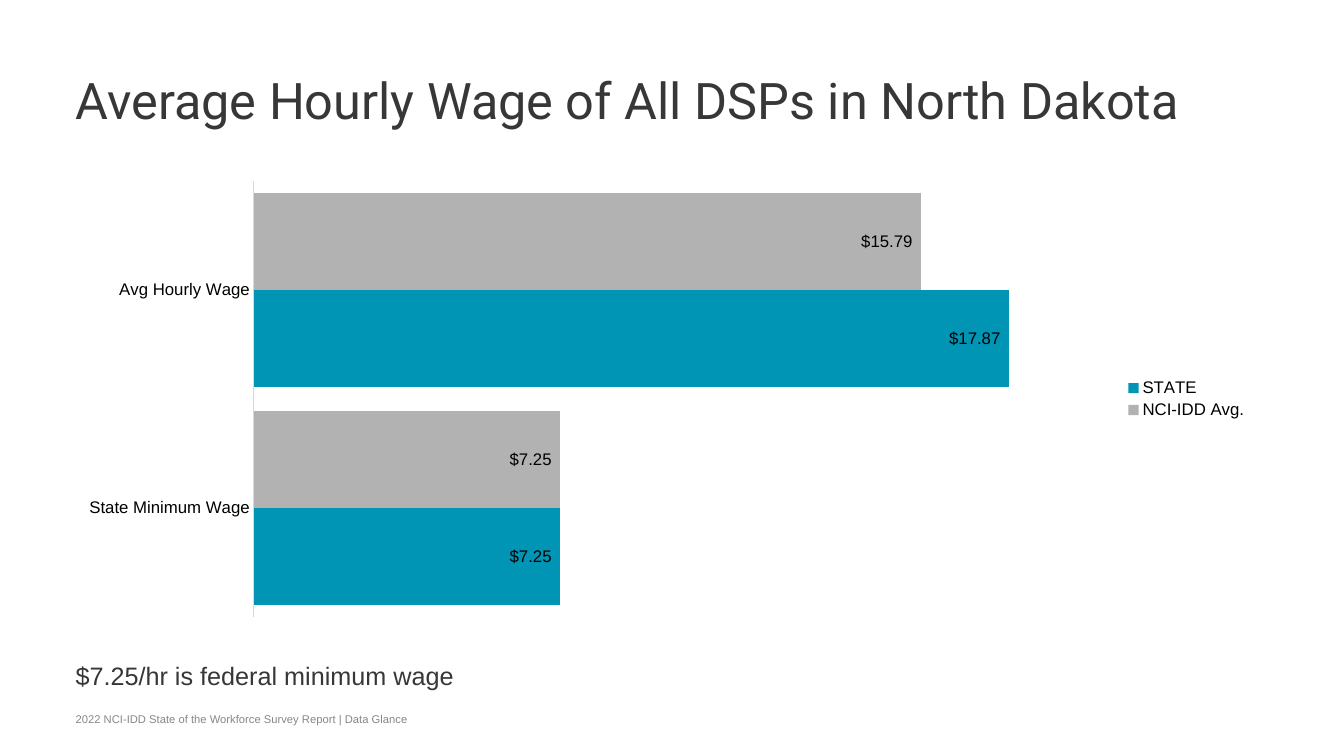
from dataclasses import dataclass

from pptx import Presentation
from pptx.chart.data import CategoryChartData
from pptx.dml.color import RGBColor
from pptx.enum.chart import XL_CHART_TYPE as ChartType
from pptx.enum.chart import XL_LABEL_POSITION as LabelPosition
from pptx.enum.chart import XL_LEGEND_POSITION as LegendPosition
from pptx.enum.chart import XL_TICK_MARK as TickMark
from pptx.enum.text import MSO_ANCHOR as Anchor
from pptx.util import Inches, Pt


@dataclass(frozen=True)
class Theme:
    """Colours, fonts and type sizes of the slide."""
    ink: str = "373737"
    muted: str = "878787"
    black: str = "000000"
    axis: str = "D9D9D9"
    average: str = "B2B2B2"
    state: str = "0094B5"
    heading_font: str = "Roboto"
    body_font: str = "Arial"
    title_size: int = 36
    note_size: int = 18
    chart_size: int = 12
    source_size: int = 8


THEME = Theme()
MONEY = '"$"#,##0.00_);[Red]\\("$"#,##0.00\\)'
CATEGORIES = ("Avg Hourly Wage", "State Minimum Wage")
WAGES = (
    ("NCI-IDD Avg.", (15.79, 7.25), THEME.average),
    ("STATE", (17.87, 7.25), THEME.state),
)


def style_font(font, size, color, name=THEME.body_font):
    """Set the face, size and colour of a font."""
    font.name = name
    font.size = Pt(size)
    font.color.rgb = RGBColor.from_string(color)


def write_text(box, text, size, color, name=THEME.body_font,
               anchor=Anchor.TOP, line_spacing=1.0):
    """Write one styled line into a shape without margins."""
    frame = box.text_frame
    frame.word_wrap = True
    frame.vertical_anchor = anchor
    frame.margin_left = frame.margin_right = 0
    frame.margin_top = frame.margin_bottom = 0
    para = frame.paragraphs[0]
    para.line_spacing = line_spacing
    span = para.add_run()
    span.text = text
    style_font(span.font, size, color, name)


def set_title(page, text):
    """Place and fill the title placeholder."""
    title = page.shapes.title
    title.left, title.top = Inches(0.75), Inches(0.75)
    title.width, title.height = Inches(11.83), Inches(1)
    write_text(title, text, THEME.title_size, THEME.ink,
               THEME.heading_font, line_spacing=0.9)
    title.text_frame.paragraphs[0].alignment = 1


def add_text(page, left, top, width, height, text, size, color, **layout):
    """Add a text box holding one line."""
    box = page.shapes.add_textbox(
        Inches(left), Inches(top), Inches(width), Inches(height))
    write_text(box, text, size, color, **layout)


def style_axes(chart):
    """Show the categories from the top and hide the value axis."""
    categories = chart.category_axis
    categories.reverse_order = True
    categories.has_major_gridlines = False
    categories.major_tick_mark = categories.minor_tick_mark = TickMark.NONE
    categories.format.line.color.rgb = RGBColor.from_string(THEME.axis)
    categories.format.line.width = Pt(0.75)
    style_font(categories.tick_labels.font, THEME.chart_size, THEME.black)
    values = chart.value_axis
    values.minimum_scale, values.maximum_scale = 0, 20
    values.has_major_gridlines = False
    values.visible = False


def style_series(series, color):
    """Colour one series and label its bars."""
    series.format.fill.solid()
    series.format.fill.fore_color.rgb = RGBColor.from_string(color)
    series.invert_if_negative = False
    labels = series.data_labels
    labels.show_value = True
    labels.position = LabelPosition.INSIDE_END
    labels.number_format = MONEY
    labels.number_format_is_linked = False
    style_font(labels.font, THEME.chart_size, THEME.black)


def add_wage_chart(page):
    """Add the clustered bar chart of wages."""
    data = CategoryChartData(number_format=MONEY)
    data.categories = CATEGORIES
    for name, wages, _ in WAGES:
        data.add_series(name, wages)
    chart = page.shapes.add_chart(
        ChartType.BAR_CLUSTERED, Inches(0.65), Inches(1.71),
        Inches(11.83), Inches(4.5), data).chart
    style_font(chart.font, THEME.chart_size, THEME.black)
    chart.has_title = False
    chart.has_legend = True
    chart.legend.position = LegendPosition.RIGHT
    chart.legend.include_in_layout = False
    style_font(chart.legend.font, THEME.chart_size, THEME.black)
    style_axes(chart)
    plot = chart.plots[0]
    plot.gap_width = 25
    plot.overlap = 0
    plot.vary_by_categories = False
    for series, (_, _, color) in zip(plot.series, WAGES):
        style_series(series, color)


def main():
    """Build and save the wage slide."""
    deck = Presentation()
    deck.slide_width, deck.slide_height = Inches(13.33), Inches(7.5)
    page = deck.slides.add_slide(deck.slide_layouts[5])
    set_title(page, "Average Hourly Wage of All DSPs in North Dakota")
    add_text(page, 0.75, 7.05, 7.86, 0.15,
             "2022 NCI-IDD State of the Workforce Survey Report | Data Glance",
             THEME.source_size, THEME.muted, anchor=Anchor.BOTTOM)
    add_wage_chart(page)
    add_text(page, 0.75, 6.49, 4.94, 0.29, "$7.25/hr is federal minimum wage",
             THEME.note_size, THEME.ink, line_spacing=1.2)
    deck.save("out.pptx")


if __name__ == "__main__":
    main()
